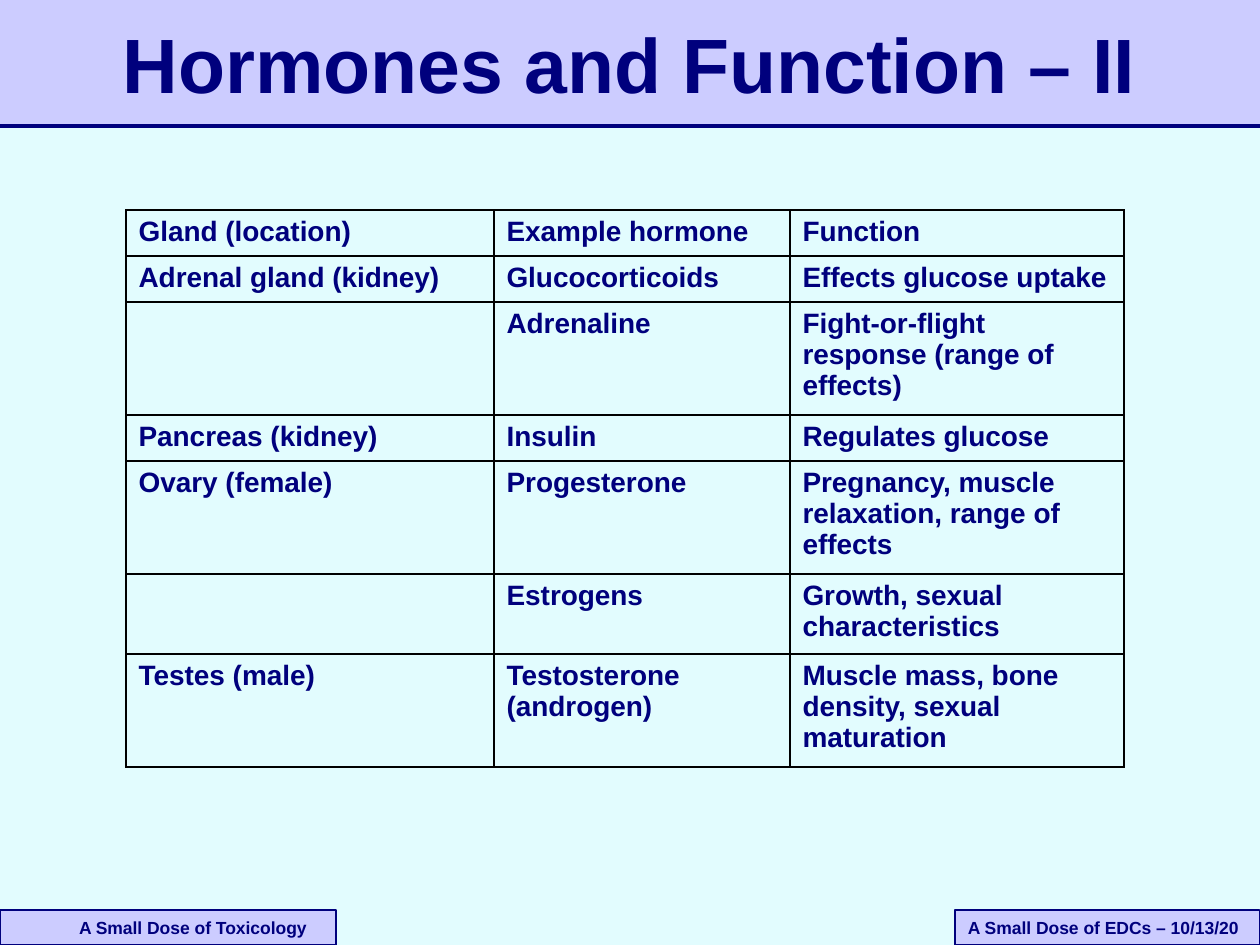
from lxml.etree import SubElement
from pptx import Presentation
from pptx.dml.color import RGBColor
from pptx.enum.shapes import MSO_CONNECTOR, MSO_SHAPE
from pptx.enum.text import MSO_ANCHOR, PP_ALIGN
from pptx.oxml.ns import qn
from pptx.util import Emu, Pt

EMU_PER_PX = 914400 // 126
COLORS = {"background": "E2FCFE", "band": "CCCCFF", "navy": "00007D", "border": "000000"}
COL_WIDTHS = [368, 296, 334]
ROW_HEIGHTS = [46, 46, 113, 46, 113, 80, 113]
ROWS = [
    ["Gland (location)", "Example hormone", "Function"],
    ["Adrenal gland (kidney)", "Glucocorticoids", "Effects glucose uptake"],
    ["", "Adrenaline", "Fight-or-flight response (range of effects)"],
    ["Pancreas (kidney)", "Insulin", "Regulates glucose"],
    ["Ovary (female)", "Progesterone", "Pregnancy, muscle relaxation, range of effects"],
    ["", "Estrogens", "Growth, sexual characteristics"],
    ["Testes (male)", "Testosterone (androgen)", "Muscle mass, bone density, sexual maturation"],
]


def px(n):
    return Emu(n * EMU_PER_PX)


def rgb(name):
    return RGBColor.from_string(COLORS[name])


class SlideBuilder:
    """Holds the current slide and the style shared by its elements."""

    font = "Arial"

    def __init__(self, s):
        self.s = s
        s.background.fill.solid()
        s.background.fill.fore_color.rgb = rgb("background")

    def label(self, tf, text, size, align=PP_ALIGN.LEFT):
        tf.text = text
        p = tf.paragraphs[0]
        p.alignment = align
        for r in p.runs:
            r.font.name, r.font.size, r.font.bold = self.font, Pt(size), True
            r.font.color.rgb = rgb("navy")

    def band(self, x, y, w, h, outlined=False):
        sp = self.s.shapes.add_shape(MSO_SHAPE.RECTANGLE, px(x), px(y), px(w), px(h))
        sp.shadow.inherit = False
        sp.fill.solid()
        sp.fill.fore_color.rgb = rgb("band")
        if outlined:
            sp.line.color.rgb = rgb("navy")
            sp.line.width = Pt(0.75)
        else:
            sp.line.fill.background()
        return sp

    def footer(self, x, w, text, inset):
        tf = self.band(x, 910, w, 35, outlined=True).text_frame
        tf.word_wrap = False
        tf.margin_left = px(inset)
        tf.vertical_anchor = MSO_ANCHOR.MIDDLE
        self.label(tf, text, 10)

    def rule(self, x1, y1, x2, y2):
        line = self.s.shapes.add_connector(
            MSO_CONNECTOR.STRAIGHT, px(x1), px(y1), px(x2), px(y2))
        line.line.color.rgb = rgb("navy")
        line.line.width = Pt(2)
        SubElement(line._element.spPr, qn("a:effectLst"))

    def title(self, x, y, w, h, text):
        sp = self.s.shapes.title
        self.s.shapes._spTree.append(sp._element)  # bring in front of the band
        sp.left, sp.top, sp.width, sp.height = px(x), px(y), px(w), px(h)
        sp.text_frame.vertical_anchor = MSO_ANCHOR.MIDDLE
        self.label(sp.text_frame, text, 44, PP_ALIGN.CENTER)

    def table(self, x, y, col_widths, row_heights, rows):
        table = self.s.shapes.add_table(
            len(rows), len(col_widths), px(x), px(y),
            px(sum(col_widths)), px(sum(row_heights))).table
        table.first_row = table.horz_banding = False
        for col, w in zip(table.columns, col_widths):
            col.width = px(w)
        for row, h, texts in zip(table.rows, row_heights, rows):
            row.height = px(h)
            for cell, text in zip(row.cells, texts):
                self.label(cell.text_frame, text, 16)
                self.borders(cell)
                cell.fill.background()

    def borders(self, cell):
        tcPr = cell._tc.get_or_add_tcPr()
        for side in ("lnL", "lnR", "lnT", "lnB"):
            ln = SubElement(tcPr, qn(f"a:{side}"), w=str(Pt(1)))
            fill = SubElement(ln, qn("a:solidFill"))
            SubElement(fill, qn("a:srgbClr"), val=COLORS["border"])


def main():
    prs = Presentation()
    prs.slide_width, prs.slide_height = px(1260), px(945)
    slide = SlideBuilder(prs.slides.add_slide(prs.slide_layouts[5]))
    slide.band(0, 0, 1260, 126)
    slide.rule(0, 126, 1260, 126)
    slide.footer(0, 336, "A Small Dose of Toxicology", inset=79)
    slide.footer(955, 305, "A Small Dose of EDCs – 10/13/20", inset=13)
    slide.title(21, 10, 1218, 105, "Hormones and Function – II")
    slide.table(126, 210, COL_WIDTHS, ROW_HEIGHTS, ROWS)
    prs.save("out.pptx")


if __name__ == "__main__":
    main()
